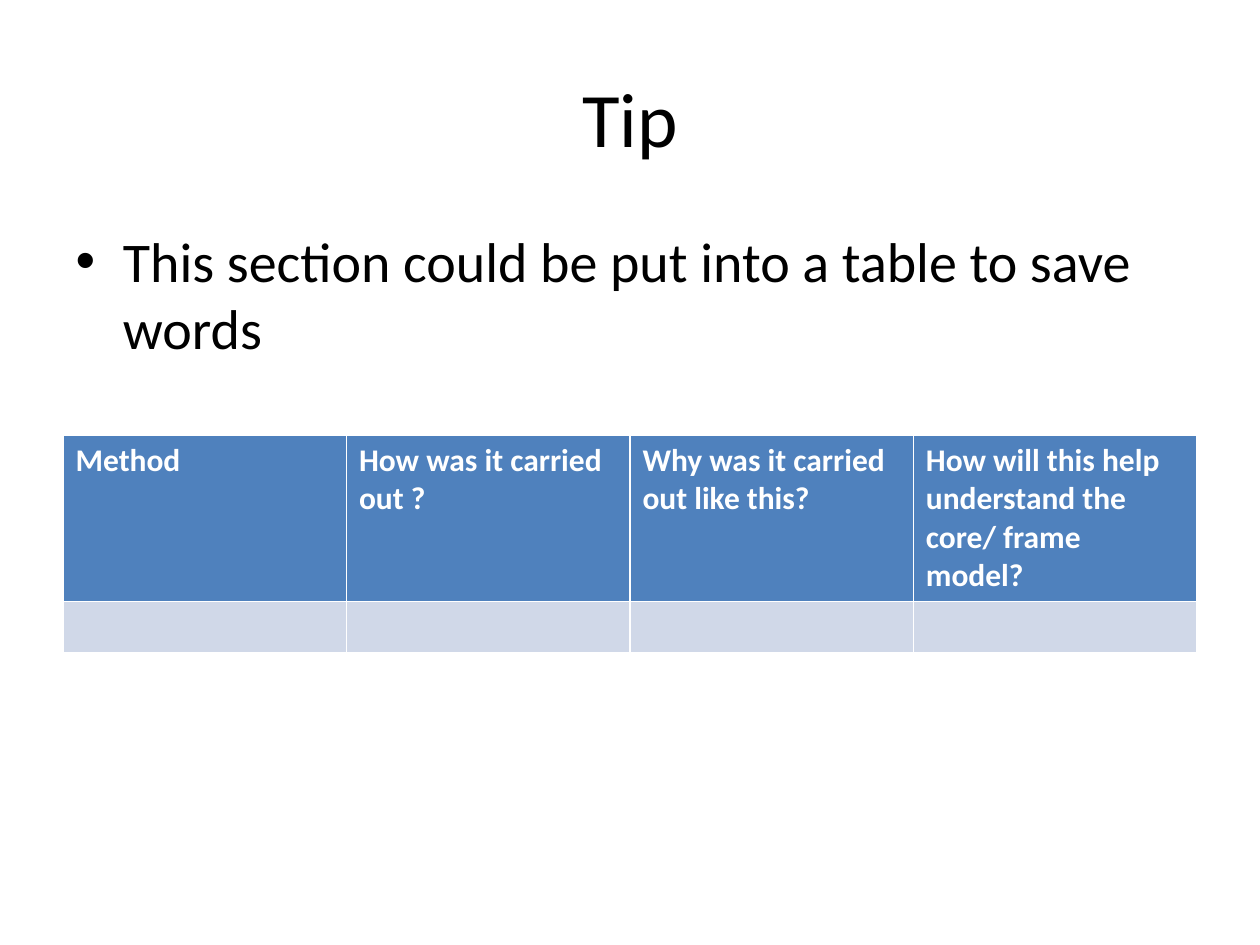
from dataclasses import dataclass

from pptx import Presentation
from pptx.dml.color import RGBColor as RGB
from pptx.enum.text import MSO_ANCHOR, PP_ALIGN
from pptx.util import Pt

PX = 914400 // 126  # EMU per px


@dataclass(frozen=True)
class Theme:
    font: str = "Calibri"
    text: str = "000000"
    header_text: str = "FFFFFF"
    header_fill: str = "4F81BD"
    row_fill: str = "D0D8E8"
    title_size: int = 44
    body_size: int = 32
    table_size: int = 18


theme = Theme()


def add_run(p, text, size, color, bold=False):
    r = p.add_run()
    r.text = text
    r.font.name = theme.font
    r.font.size = Pt(size)
    r.font.bold = bold
    r.font.color.rgb = RGB.from_string(color)


def place(sp, left, top, width, height):
    sp.left, sp.top, sp.width, sp.height = (
        v * PX for v in (left, top, width, height))


prs = Presentation()
prs.slide_width, prs.slide_height = 1260 * PX, 945 * PX
slide = prs.slides.add_slide(prs.slide_layouts[1])
left, width = 63, 1134

# Title
title = slide.shapes.title
place(title, left, 38, width, 157)
tf = title.text_frame
tf.vertical_anchor = MSO_ANCHOR.MIDDLE
p = tf.paragraphs[0]
p.alignment = PP_ALIGN.CENTER
add_run(p, "Tip", theme.title_size, theme.text)

# Bulleted tip
body = slide.placeholders[1]
place(body, left, 220, width, 624)
add_run(body.text_frame.paragraphs[0],
        "This section could be put into a table to save words",
        theme.body_size, theme.text)

# Methods table: header and one blank row
headers = [
    "Method",
    "How was it carried out ?",
    "Why was it carried out like this?",
    "How will this help understand the core/ frame model?",
]
row_height = 51
table = slide.shapes.add_table(
    2, len(headers), left * PX, 435 * PX, width * PX, 2 * row_height * PX).table
for col, header in enumerate(headers):
    add_run(table.cell(0, col).text_frame.paragraphs[0], header,
            theme.table_size, theme.header_text, bold=True)
    for row, fill in enumerate((theme.header_fill, theme.row_fill)):
        cell = table.cell(row, col)
        cell.fill.solid()
        cell.fill.fore_color.rgb = RGB.from_string(fill)

prs.save("out.pptx")
